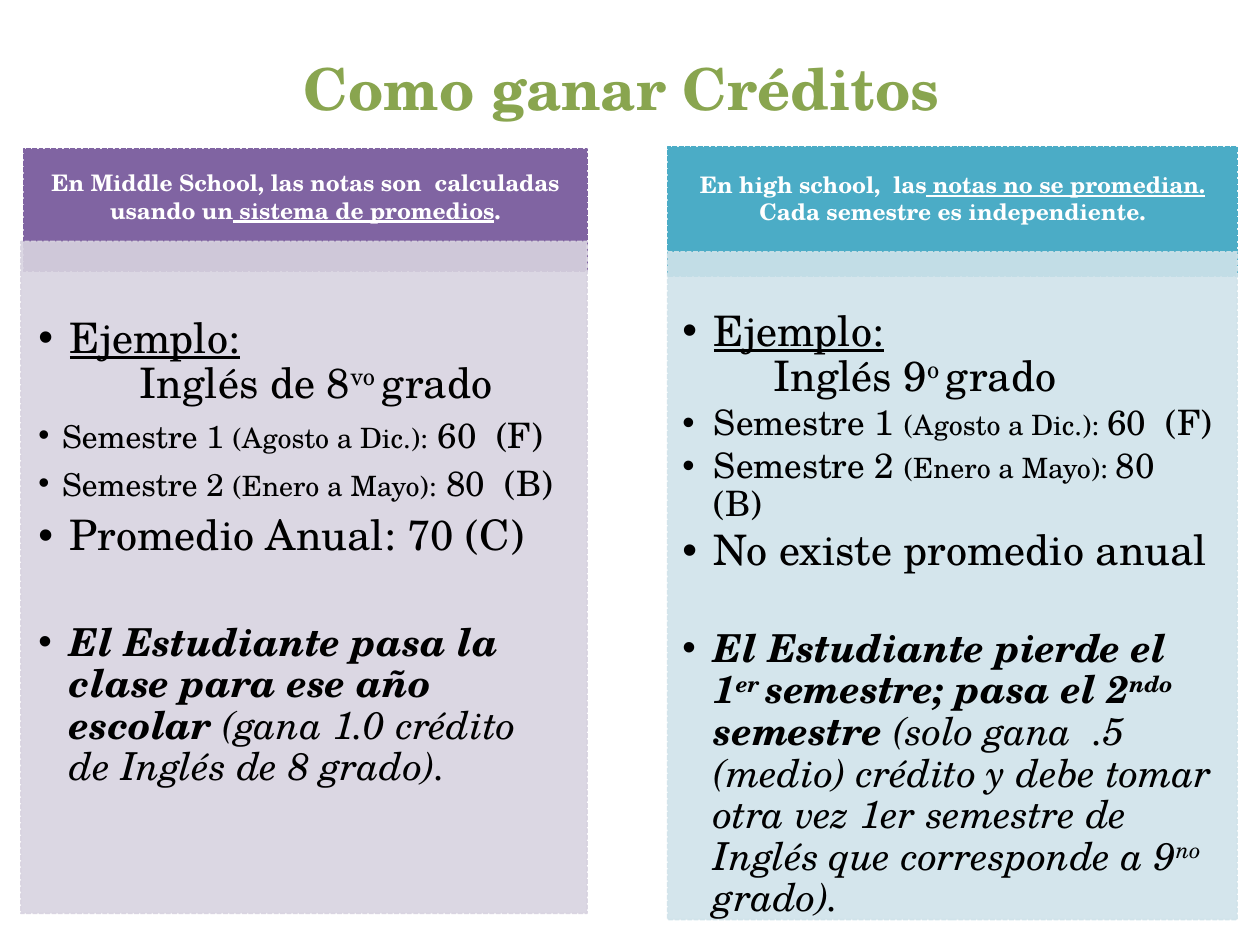
from lxml.etree import SubElement
from pptx import Presentation
from pptx.dml.color import RGBColor
from pptx.enum.dml import MSO_LINE
from pptx.enum.shapes import MSO_SHAPE
from pptx.enum.text import MSO_ANCHOR, PP_ALIGN
from pptx.oxml.ns import qn
from pptx.util import Pt

FONT = "TeX Gyre Schola"


def rgb(value):
    return RGBColor.from_string(value)


def add_run(p, text, size, color="000000", style=""):
    """Style letters: b bold, i italic, u underline, ^ superscript."""
    r = p.add_run()
    r.text = text
    f = r.font
    f.name, f.size, f.color.rgb = FONT, Pt(size), rgb(color)
    f.bold, f.italic, f.underline = (c in style for c in "biu")
    if "^" in style:
        r._r.get_or_add_rPr().set("baseline", "30000")


def set_bullet(p, left, hanging):
    pPr = p._p.get_or_add_pPr()
    pPr.set("marL", str(Pt(left)))
    pPr.set("indent", str(Pt(-hanging)))
    if hanging:
        SubElement(pPr, qn("a:buFont"), typeface="Arial")
        SubElement(pPr, qn("a:buChar"), char="•")
    else:
        SubElement(pPr, qn("a:buNone"))


def add_panel(s, box, color, insets, anchor, alpha=None):
    sp = s.shapes.add_shape(MSO_SHAPE.RECTANGLE, *map(Pt, box))
    sp.shadow.inherit = False
    sp.fill.solid()
    sp.fill.fore_color.rgb = rgb(color)
    sp.line.color.rgb = rgb(color)
    sp.line.width = Pt(0.9)
    sp.line.dash_style = MSO_LINE.SQUARE_DOT
    if alpha:
        for clr in sp._element.spPr.iter(qn("a:srgbClr")):
            SubElement(clr, qn("a:alpha"), val=str(alpha * 1000))
    tf = sp.text_frame
    tf.word_wrap = True
    tf.vertical_anchor = anchor
    tf.margin_left, tf.margin_top, tf.margin_right, tf.margin_bottom = map(Pt, insets)
    return tf


def add_title(s, box, text):
    sp = s.shapes.title
    sp.left, sp.top, sp.width, sp.height = map(Pt, box)
    tf = sp.text_frame
    tf.vertical_anchor = MSO_ANCHOR.BOTTOM
    p = tf.paragraphs[0]
    p.alignment = PP_ALIGN.CENTER
    add_run(p, text, 33, "89A54F", "b")


def add_heading(s, box, color, runs):
    tf = add_panel(s, box, color, (7.2, 4.3, 7.2, 20), MSO_ANCHOR.MIDDLE)
    p = tf.paragraphs[0]
    p.alignment = PP_ALIGN.CENTER
    for text, style in runs:
        add_run(p, text, 13, "FFFFFF", style)


def add_body(s, box, color, insets, after, paragraphs):
    tf = add_panel(s, box, color, insets, MSO_ANCHOR.TOP, alpha=90)
    for i, (left, hanging, before, runs) in enumerate(paragraphs):
        p = tf.paragraphs[0] if i == 0 else tf.add_paragraph()
        set_bullet(p, left, hanging)
        p.alignment = PP_ALIGN.LEFT
        p.line_spacing = 0.9
        p.space_before = Pt(before)
        p.space_after = Pt(after if i else 0)  # the example runs on below its label
        for run in runs:
            text, size, *style = run
            add_run(p, text, size, style=style[0] if style else "")


# Paragraphs: left indent, hanging indent, space before, runs
LABEL = (18, 18, 0, [("Ejemplo:", 24, "u")])

MIDDLE_SCHOOL = [
    LABEL,
    (58, 0, 0, [("Inglés de 8", 24), ("vo ", 24, "^"), ("grado", 24)]),
    (13.5, 13.5, 0, [("Semestre 1 ", 18), ("(Agosto a Dic.):", 16), (" 60  (F)", 20)]),
    (13.5, 13.5, 0, [("Semestre 2 ", 18), ("(Enero a Mayo):", 16), (" 80  (B)", 20)]),
    (18, 18, 0, [("Promedio Anual: 70 (C)", 24)]),
    (18, 18, 30, [("El Estudiante pasa la clase para ese año escolar ", 22, "bi"),
                  ("(gana 1.0 crédito de Inglés de 8 grado).", 22, "i")]),
]

HIGH_SCHOOL = [
    LABEL,
    (52, 0, 0, [("Inglés 9", 24), ("o ", 24, "^"), ("grado", 24)]),
    (18, 18, 0, [("Semestre 1 ", 20), ("(Agosto a Dic.): ", 16), ("60  (F)", 20)]),
    (18, 18, 0, [("Semestre 2 ", 20), ("(Enero a Mayo): ", 16), ("80  (B)", 20)]),
    (18, 18, 0, [("No existe promedio anual", 24)]),
    (18, 18, 28, [("El Estudiante pierde el 1", 22, "bi"), ("er ", 22, "bi^"),
                  ("semestre; pasa el 2", 22, "bi"), ("ndo ", 22, "bi^"),
                  ("semestre ", 22, "bi"),
                  ("(solo gana  .5 (medio) crédito y debe tomar otra vez 1er semestre "
                   "de Inglés que corresponde a 9", 22, "i"),
                  ("no ", 22, "i^"), ("grado).", 22, "i")]),
]


def main():
    prs = Presentation()
    prs.slide_width, prs.slide_height = Pt(720), Pt(540)
    s = prs.slides.add_slide(prs.slide_layouts[5])

    # Middle school column
    add_heading(s, (13.5, 85, 322, 70), "8064A2",
                [("En Middle School, las notas son  calculadas usando un", "b"),
                 (" sistema de promedios", "bu"), (".", "b")])
    add_body(s, (12, 138, 323.5, 384), "D8D3E0", (10, 43, 13.5, 15), 6, MIDDLE_SCHOOL)

    # High school column
    add_heading(s, (381.5, 84, 325.5, 74), "4BACC6",
                [("En high school,  las", "b"), (" notas no se promedian.", "bu"),
                 (" Cada semestre es independiente.", "b")])
    add_body(s, (381.5, 144, 325.5, 381.5), "D0E3EA", (8.5, 33, 11.5, 12), 3, HIGH_SCHOOL)

    add_title(s, (24, 13.5, 672, 60), "Como ganar Créditos ")
    prs.save("out.pptx")


if __name__ == "__main__":
    main()
